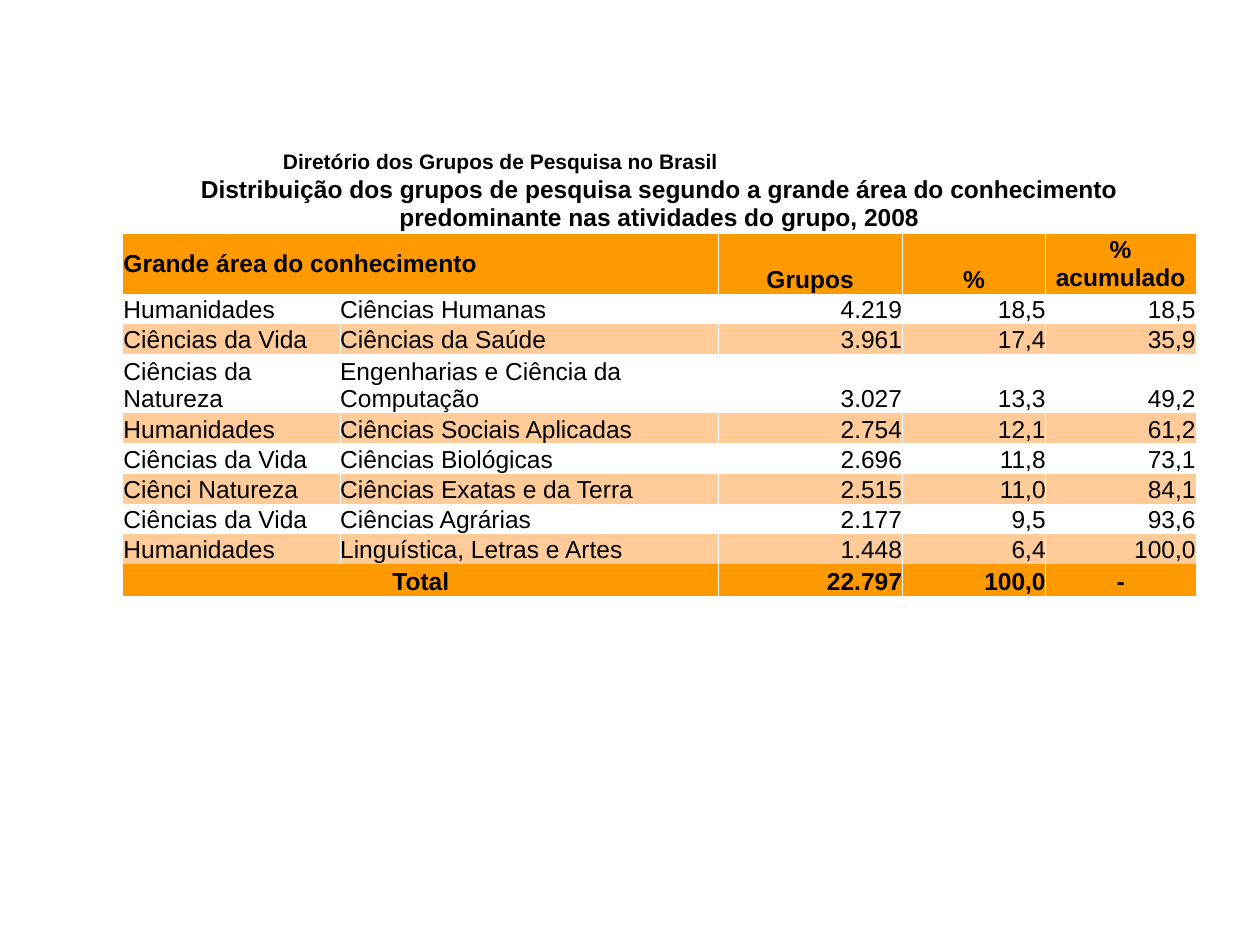
from lxml.etree import SubElement
from pptx import Presentation
from pptx.dml.color import RGBColor
from pptx.enum.text import MSO_ANCHOR as ANCHOR, PP_ALIGN as ALIGN
from pptx.oxml.ns import qn
from pptx.util import Inches, Pt

# Content
SOURCE = "Diretório dos Grupos de Pesquisa no Brasil"
HEADING = ("Distribuição dos grupos de pesquisa segundo a grande área do "
           "conhecimento predominante nas atividades do grupo, 2008")
HEADER = ("Grande área do conhecimento", "", "Grupos", "%", "% acumulado")
AREAS = [
    ("Humanidades", "Ciências Humanas", "4.219", "18,5", "18,5"),
    ("Ciências da Vida", "Ciências da Saúde", "3.961", "17,4", "35,9"),
    ("Ciências da Natureza", "Engenharias e Ciência da Computação", "3.027", "13,3", "49,2"),
    ("Humanidades", "Ciências Sociais Aplicadas", "2.754", "12,1", "61,2"),
    ("Ciências da Vida", "Ciências Biológicas", "2.696", "11,8", "73,1"),
    ("Ciênci Natureza", "Ciências Exatas e da Terra", "2.515", "11,0", "84,1"),
    ("Ciências da Vida", "Ciências Agrárias", "2.177", "9,5", "93,6"),
    ("Humanidades", "Linguística, Letras e Artes", "1.448", "6,4", "100,0"),
]
TOTAL = ("Total", "", "22.797", "100,0", "-")
ROWS = [(SOURCE, "", "", "", ""), (HEADING, "", "", "", ""), HEADER, *AREAS, TOTAL]

# Layout and style
COLORS = {"text": "000000", "line": "FFFFFF", "strong": "FF9900", "band": "FFCC99"}
FONT = "Arial"
LEFT, TOP = 0.98, 1.15
COL_WIDTHS = [1.72, 3, 1.46, 1.14, 1.19]
ROW_HEIGHTS = [0.23, 0.48, 0.47, 0.24, 0.24, 0.47, 0.24, 0.24, 0.24, 0.24, 0.24, 0.25]
SOURCE_ROW, HEADING_ROW, HEADER_ROW, FIRST_AREA = range(4)
TOTAL_ROW = len(ROWS) - 1
LAST_COL = len(COL_WIDTHS) - 1
SPANS = {SOURCE_ROW: 1, HEADING_ROW: LAST_COL, HEADER_ROW: 1, TOTAL_ROW: 1}  # last column
MIDDLE = {(HEADING_ROW, 0), (HEADER_ROW, 0), (HEADER_ROW, LAST_COL)}
CENTERED = {(HEADING_ROW, 0), (TOTAL_ROW, 0), (TOTAL_ROW, LAST_COL),
            *((HEADER_ROW, c) for c in range(2, LAST_COL + 1))}


def row_color(row):
    if row in (HEADER_ROW, TOTAL_ROW):
        return COLORS["strong"]
    if row > FIRST_AREA and (row - FIRST_AREA) % 2:
        return COLORS["band"]
    return None


def alignment(row, col):
    if (row, col) in CENTERED:
        return ALIGN.CENTER
    return ALIGN.RIGHT if row == SOURCE_ROW or col >= 2 else ALIGN.LEFT


def set_borders(cell, sides):
    """Draw thin lines on the given sides and none on the others."""
    tc_pr = cell._tc.get_or_add_tcPr()
    for side in "LRTB":
        ln = SubElement(tc_pr, qn(f"a:ln{side}"), w=str(Pt(0.5)))
        if side in sides:
            fill = SubElement(ln, qn("a:solidFill"))
            SubElement(fill, qn("a:srgbClr"), val=COLORS["line"])
        else:
            SubElement(ln, qn("a:noFill"))


def format_cell(cell, row, col, text):
    cell.margin_left = cell.margin_right = cell.margin_top = cell.margin_bottom = 0
    cell.vertical_anchor = ANCHOR.MIDDLE if (row, col) in MIDDLE else ANCHOR.BOTTOM
    inner = ("L" if col > 0 else "") + ("R" if col < LAST_COL else "")
    set_borders(cell, inner if row >= HEADER_ROW else "")
    color = row_color(row)
    if color:
        cell.fill.solid()
        cell.fill.fore_color.rgb = RGBColor.from_string(color)
    else:
        cell.fill.background()

    p = cell.text_frame.paragraphs[0]
    p.alignment = alignment(row, col)
    size = 12 if row == SOURCE_ROW else 14
    if not text:  # keeps empty cells from stretching the row
        SubElement(p._p, qn("a:endParaRPr"), sz=str(size * 100))
        return
    p.text = text
    font = p.runs[0].font
    font.name, font.size = FONT, Pt(size)
    font.bold = row < FIRST_AREA or row == TOTAL_ROW
    font.color.rgb = RGBColor.from_string(COLORS["text"])


prs = Presentation()
prs.slide_width, prs.slide_height = Inches(10), Inches(7.5)
s = prs.slides.add_slide(prs.slide_layouts[6])

# Table of research groups
table = s.shapes.add_table(
    len(ROWS), len(COL_WIDTHS), Inches(LEFT), Inches(TOP),
    Inches(sum(COL_WIDTHS)), Inches(sum(ROW_HEIGHTS))).table
table.first_row = table.horz_banding = False
for column, width in zip(table.columns, COL_WIDTHS):
    column.width = Inches(width)
for table_row, height in zip(table.rows, ROW_HEIGHTS):
    table_row.height = Inches(height)
for row, last in SPANS.items():
    table.cell(row, 0).merge(table.cell(row, last))
for row, texts in enumerate(ROWS):
    for col, text in enumerate(texts):
        format_cell(table.cell(row, col), row, col, text)

prs.save("out.pptx")
